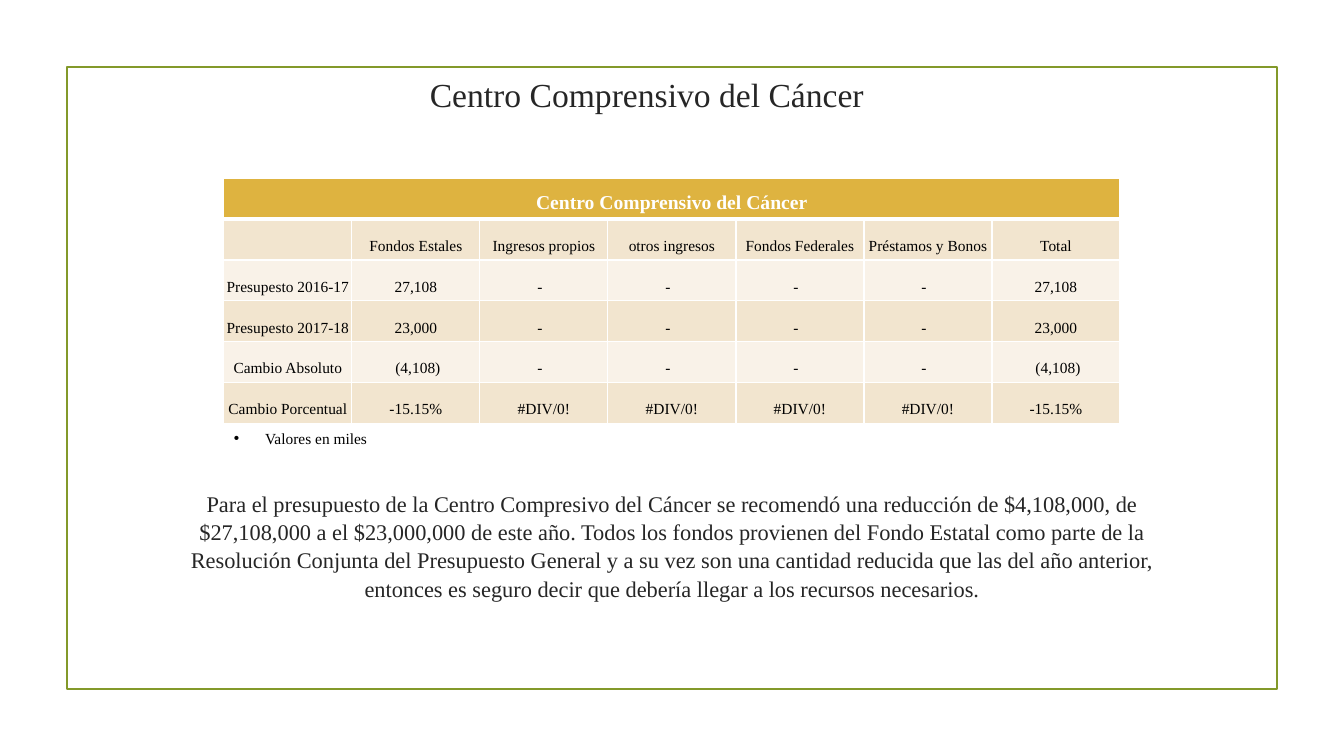
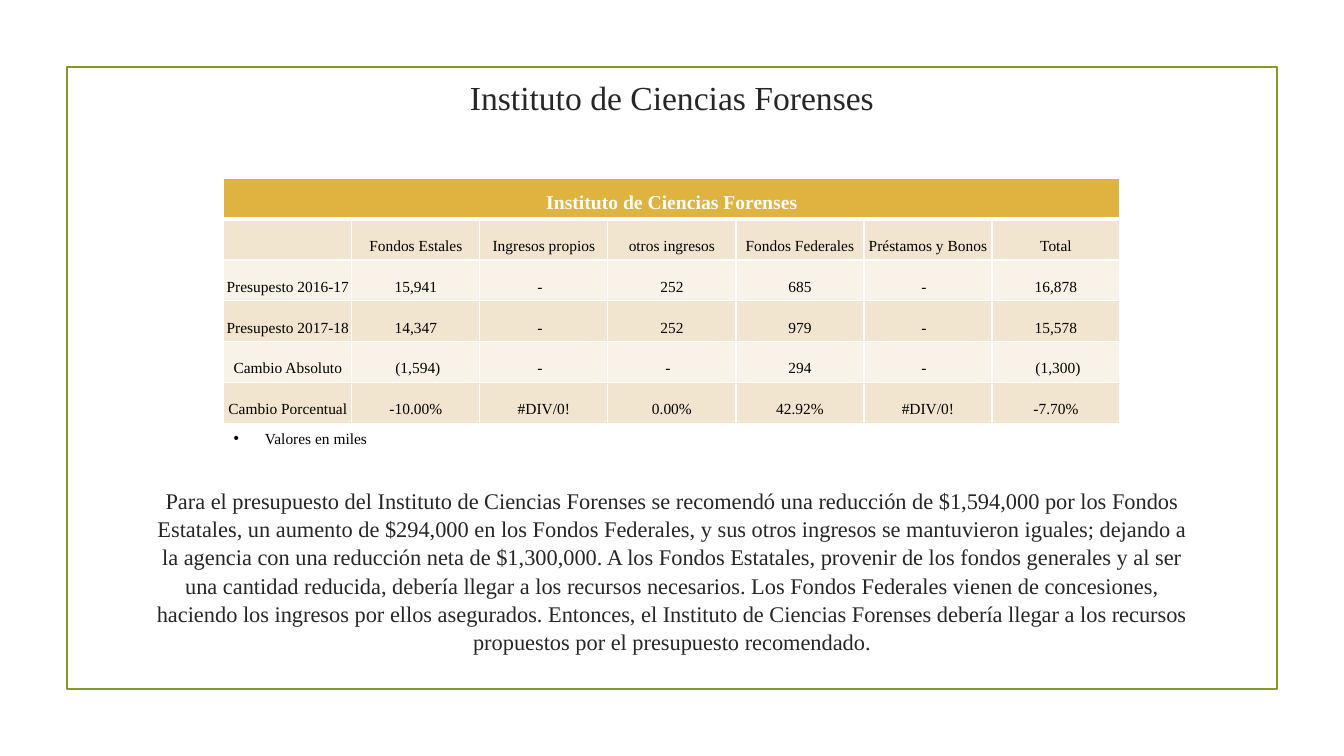
from lxml.etree import SubElement
from pptx import Presentation
from pptx.dml.color import RGBColor
from pptx.enum.shapes import MSO_SHAPE
from pptx.enum.text import MSO_ANCHOR, PP_ALIGN
from pptx.oxml.ns import qn
from pptx.util import Inches, Pt

WIDTH, HEIGHT = 13.33, 7.5
FRAME_WIDTH, FRAME_HEIGHT = 12, 6.17
TEXT_WIDTH, TITLE_HEIGHT = 10.51, 0.62
COLUMN, ROW = 1.27, 0.405
TABLE_TOP = 1.77
FONT = "Times New Roman"
GREEN, GOLD, SAND, CREAM = "83992A", "DEB340", "F2E5CF", "F9F2E8"
WHITE, BLACK, INK = "FFFFFF", "000000", "262626"

HEADINGS = ["", "Fondos Estales", "Ingresos propios", "otros ingresos",
            "Fondos Federales", "Préstamos y Bonos", "Total"]
LABELS = ["Presupesto 2016-17", "Presupesto 2017-18", "Cambio Absoluto", "Cambio Porcentual"]

AGENCIES = [
    {
        "name": "Centro Comprensivo del Cáncer",
        "title_at": (1.16, 0.56),
        "body_top": 4.8, "body_height": 1.91, "note_width": 7 * COLUMN,
        "values": [
            ["27,108", "-", "-", "-", "-", "27,108"],
            ["23,000", "-", "-", "-", "-", "23,000"],
            ["(4,108)", "-", "-", "-", "-", "(4,108)"],
            ["-15.15%", "#DIV/0!", "#DIV/0!", "#DIV/0!", "#DIV/0!", "-15.15%"],
        ],
        "body": "Para el presupuesto de la Centro Compresivo del Cáncer se recomendó una "
                "reducción de $4,108,000, de $27,108,000 a el $23,000,000 de este año. Todos "
                "los fondos provienen del Fondo Estatal como parte de la Resolución Conjunta "
                "del Presupuesto General y a su vez son una cantidad reducida que las del año "
                "anterior, entonces es seguro decir que debería llegar a los recursos "
                "necesarios.",
    },
    {
        "name": "Instituto de Ciencias Forenses",
        "title_at": (1.41, 0.59),
        "body_top": 4.77, "body_height": 2.01, "note_width": 1.6,
        "values": [
            ["15,941", "-", "252", "685", "-", "16,878"],
            ["14,347", "-", "252", "979", "-", "15,578"],
            ["(1,594)", "-", "-", "294", "-", "(1,300)"],
            ["-10.00%", "#DIV/0!", "0.00%", "42.92%", "#DIV/0!", "-7.70%"],
        ],
        "body": "Para el presupuesto del Instituto de Ciencias Forenses se recomendó una "
                "reducción de $1,594,000 por los Fondos Estatales, un aumento de $294,000 en "
                "los Fondos Federales, y sus otros ingresos se mantuvieron iguales; dejando a "
                "la agencia con una reducción neta de $1,300,000. A los Fondos Estatales, "
                "provenir de los fondos generales y al ser una cantidad reducida, debería "
                "llegar a los recursos necesarios. Los Fondos Federales vienen de concesiones, "
                "haciendo los ingresos por ellos asegurados. Entonces, el Instituto de Ciencias "
                "Forenses debería llegar a los recursos propuestos por el presupuesto "
                "recomendado.",
    },
]


def color(code):
    return RGBColor.from_string(code)


def write(frame, text, size, code, align=PP_ALIGN.CENTER, bold=False):
    """Fill a text frame with one paragraph and return that paragraph."""
    frame.word_wrap = True
    para = frame.paragraphs[0]
    para.text = text
    para.alignment = align
    para.font.name = FONT
    para.font.size = Pt(size)
    para.font.bold = bold
    para.font.color.rgb = color(code)
    return para


deck = Presentation()
deck.slide_width, deck.slide_height = Inches(WIDTH), Inches(HEIGHT)

for agency in AGENCIES:
    page = deck.slides.add_slide(deck.slide_layouts[6])

    border = page.shapes.add_shape(
        MSO_SHAPE.RECTANGLE,
        Inches((WIDTH - FRAME_WIDTH) / 2), Inches((HEIGHT - FRAME_HEIGHT) / 2),
        Inches(FRAME_WIDTH), Inches(FRAME_HEIGHT))
    border.shadow.inherit = False
    border.fill.background()
    border.line.color.rgb = color(GREEN)
    border.line.width = Pt(1.25)

    left, top = agency["title_at"]
    title = page.shapes.add_textbox(
        Inches(left), Inches(top), Inches(TEXT_WIDTH), Inches(TITLE_HEIGHT))
    title.text_frame.vertical_anchor = MSO_ANCHOR.BOTTOM
    write(title.text_frame, agency["name"], 24, INK)

    body = page.shapes.add_textbox(
        Inches((WIDTH - TEXT_WIDTH) / 2), Inches(agency["body_top"]),
        Inches(TEXT_WIDTH), Inches(agency["body_height"]))
    write(body.text_frame, agency["body"], 16, INK).line_spacing = 1.05

    rows = [[agency["name"]] + [""] * (len(HEADINGS) - 1), HEADINGS]
    rows += [[label] + values for label, values in zip(LABELS, agency["values"])]
    table_left = (WIDTH - COLUMN * len(HEADINGS)) / 2
    table = page.shapes.add_table(
        len(rows), len(HEADINGS), Inches(table_left), Inches(TABLE_TOP),
        Inches(COLUMN * len(HEADINGS)), Inches(ROW * len(rows))).table
    table.first_row = table.horz_banding = False
    for row_number, row in enumerate(rows):
        header = row_number == 0
        for column_number, text in enumerate(row):
            cell = table.cell(row_number, column_number)
            cell.vertical_anchor = MSO_ANCHOR.BOTTOM
            cell.margin_top, cell.margin_bottom = Inches(0.01), Inches(0.05)
            # Accounting format: dashes sit a little left, negatives a little right
            cell.margin_left = Inches(0.05 if text.startswith("(") else 0.01)
            cell.margin_right = Inches(0.09 if text == "-" else 0.01)
            write(cell.text_frame, text, 14 if header else 11,
                  WHITE if header else BLACK, bold=header)
            properties = cell._tc.get_or_add_tcPr()
            for side in ("lnL", "lnR", "lnT", "lnB"):
                thick = (row_number, side) in ((0, "lnB"), (1, "lnT"))
                line = SubElement(properties, qn(f"a:{side}"), w=str(Pt(3 if thick else 1)))
                SubElement(SubElement(line, qn("a:solidFill")), qn("a:srgbClr"), val=WHITE)
            cell.fill.solid()
            cell.fill.fore_color.rgb = color(
                GOLD if header else SAND if row_number % 2 else CREAM)
    table.cell(0, 0).merge(table.cell(0, len(HEADINGS) - 1))

    note = page.shapes.add_textbox(
        Inches(table_left), Inches(TABLE_TOP + ROW * len(rows) + 0.01),
        Inches(agency["note_width"]), Inches(0.29))
    bullet = note.text_frame.paragraphs[0]._p.get_or_add_pPr()
    bullet.set("marL", str(Inches(0.31)))
    bullet.set("indent", str(-Inches(0.31)))
    SubElement(bullet, qn("a:buFont"), typeface="Arial")
    SubElement(bullet, qn("a:buChar"), char="•")
    write(note.text_frame, "Valores en miles", 11, BLACK, PP_ALIGN.LEFT)

deck.save("out.pptx")
